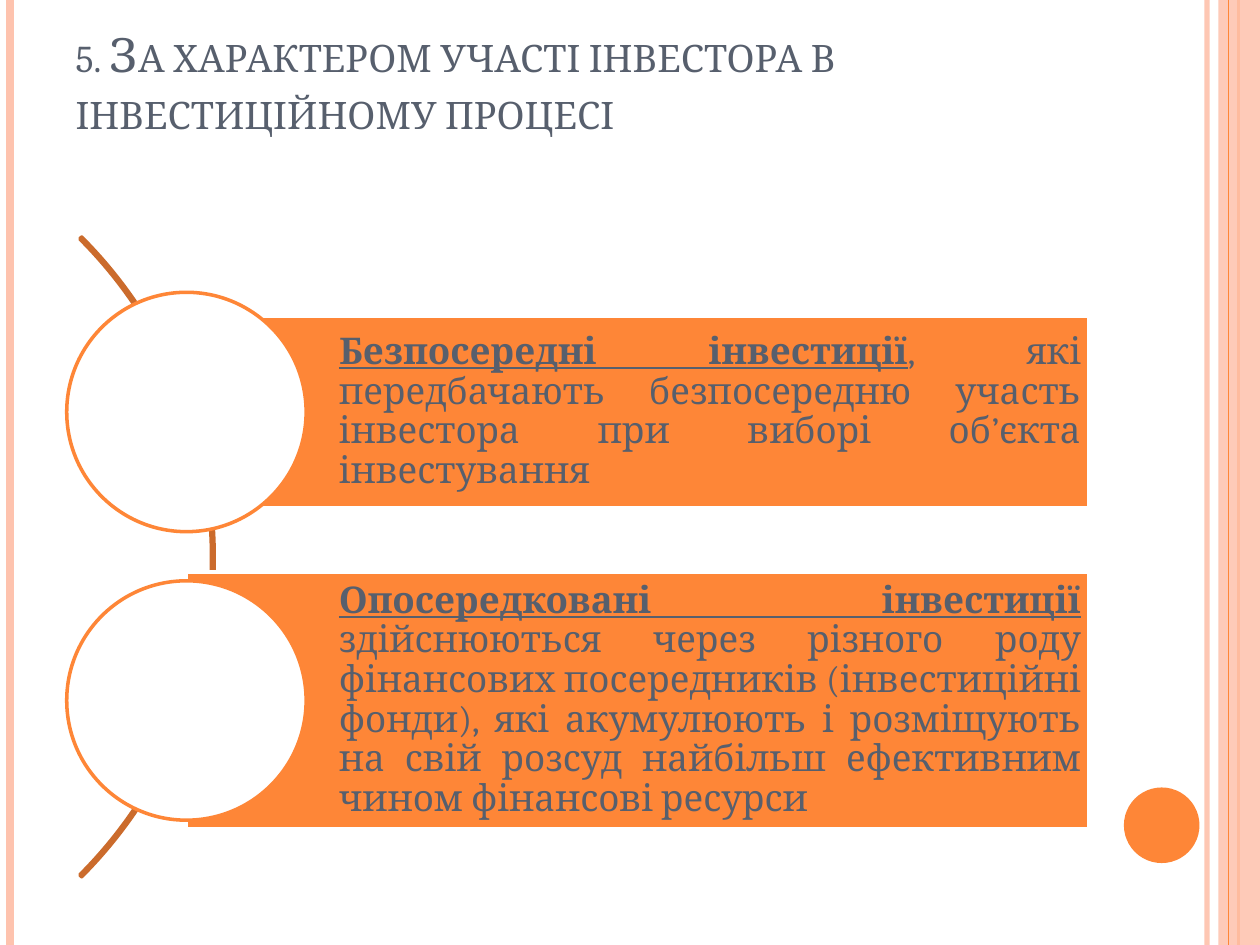
from lxml.etree import SubElement
from pptx import Presentation
from pptx.dml.color import RGBColor
from pptx.enum.shapes import MSO_CONNECTOR as Connector, MSO_SHAPE as Shape
from pptx.enum.text import MSO_ANCHOR as Anchor, MSO_AUTO_SIZE as AutoSize, PP_ALIGN as Align
from pptx.oxml.ns import qn
from pptx.util import Inches, Pt

ORANGE = RGBColor(0xFE, 0x86, 0x37)
PEACH = RGBColor(0xFE, 0xC3, 0xAE)
RUST = RGBColor(0xCB, 0x6B, 0x2C)
SLATE = RGBColor(0x57, 0x5F, 0x6D)
WHITE = RGBColor(0xFF, 0xFF, 0xFF)
FONT = "Cambria"
WIDTH, HEIGHT = 10, 7.5

TITLE = "5. За характером участі інвестора в інвестиційному процесі"

# Term, explanation, bar centre, bar height
INVESTMENTS = [
    ("Безпосередні інвестиції",
     ", які передбачають безпосередню участь інвестора при виборі об’єкта інвестування",
     3.27, 1.52),
    ("Опосередковані інвестиції ",
     "здійснюються через різного роду фінансових посередників (інвестиційні фонди), "
     "які акумулюють і розміщують на свій розсуд найбільш ефективним чином фінансові ресурси",
     5.56, 2.04),
]
BAR_LEFT, BAR_WIDTH = 1.48, 7.16
CIRCLE = 1.9
ARC_CENTRE, ARC_SIZE = (-1.89, 4.42), 7.18

# Position, colour, width in points, opacity in percent
RAILS = [(9.58, PEACH, 3, 93), (0.08, PEACH, 4.5, 100), (9.83, ORANGE, 1.5, 100)]
INNER_RAIL = (9.75, ORANGE, 0.75, 100)


def set_opacity(element, percent):
    colour = next(element.iter(qn("a:srgbClr")))
    SubElement(colour, qn("a:alpha")).set("val", str(percent * 1000))


def add_rail(page, x, colour, width, opacity):
    rail = page.shapes.add_connector(
        Connector.STRAIGHT, Inches(x), 0, Inches(x), Inches(HEIGHT))
    rail.line.color.rgb = colour
    rail.line.width = Pt(width)
    properties = rail.element.spPr
    if opacity < 100:
        set_opacity(properties, opacity)
    SubElement(properties, qn("a:effectLst"))


def add_figure(page, kind, left, top, width, height, fill=None, line=None):
    figure = page.shapes.add_shape(
        kind, Inches(left), Inches(top), Inches(width), Inches(height))
    figure.shadow.inherit = False
    if fill is None:
        figure.fill.background()
    else:
        figure.fill.solid()
        figure.fill.fore_color.rgb = fill
    if line is None:
        figure.line.fill.background()
    else:
        figure.line.color.rgb = line
        figure.line.width = Pt(2)
    return figure


def add_span(para, text, size, strong=False):
    span = para.add_run()
    span.text = text
    span.font.name = FONT
    span.font.size = Pt(size)
    span.font.color.rgb = SLATE
    span.font.bold = strong
    span.font.underline = strong
    return span


def add_investment(page, term, explanation, centre, height):
    bar = add_figure(page, Shape.RECTANGLE, BAR_LEFT, centre - height / 2,
                     BAR_WIDTH, height, ORANGE, WHITE)
    frame = bar.text_frame
    frame.word_wrap = True
    frame.vertical_anchor = Anchor.MIDDLE
    frame.margin_left = Inches(1.21)
    frame.margin_top = frame.margin_right = frame.margin_bottom = Inches(0.06)
    para = frame.paragraphs[0]
    para.alignment = Align.JUSTIFY
    para.line_spacing = 0.9
    add_span(para, term, 21, strong=True)
    add_span(para, explanation, 21)
    add_figure(page, Shape.OVAL, BAR_LEFT - CIRCLE / 2, centre - CIRCLE / 2,
               CIRCLE, CIRCLE, WHITE, ORANGE)


def main():
    deck = Presentation()
    deck.slide_width, deck.slide_height = Inches(WIDTH), Inches(HEIGHT)
    page = deck.slides.add_slide(deck.slide_layouts[5])

    # Side decoration
    for rail in RAILS:
        add_rail(page, *rail)
    band = add_figure(page, Shape.RECTANGLE, 9.67, 0, 0.33, HEIGHT, PEACH)
    set_opacity(band.element.spPr, 87)
    add_rail(page, *INNER_RAIL)
    add_figure(page, Shape.OVAL, 8.92, 6.25, 0.6, 0.6, ORANGE)

    # Title
    title = page.shapes.title
    title.left, title.top = Inches(0.5), Inches(0.13)
    title.width, title.height = Inches(8.17), Inches(1.02)
    frame = title.text_frame
    frame.word_wrap = True
    frame.auto_size = AutoSize.NONE
    frame.vertical_anchor = Anchor.BOTTOM
    para = frame.paragraphs[0]
    para.alignment = Align.LEFT
    span = add_span(para, TITLE, 27)
    span.font._element.set("cap", "small")

    # Arc joining the two kinds of investment
    x, y = ARC_CENTRE
    arc = add_figure(page, Shape.BLOCK_ARC, x - ARC_SIZE / 2, y - ARC_SIZE / 2,
                     ARC_SIZE, ARC_SIZE, line=RUST)
    for index, value in enumerate((189, 27, 0.003)):
        arc.adjustments[index] = value

    # Bars with circles
    for investment in INVESTMENTS:
        add_investment(page, *investment)

    deck.save("out.pptx")


if __name__ == "__main__":
    main()
